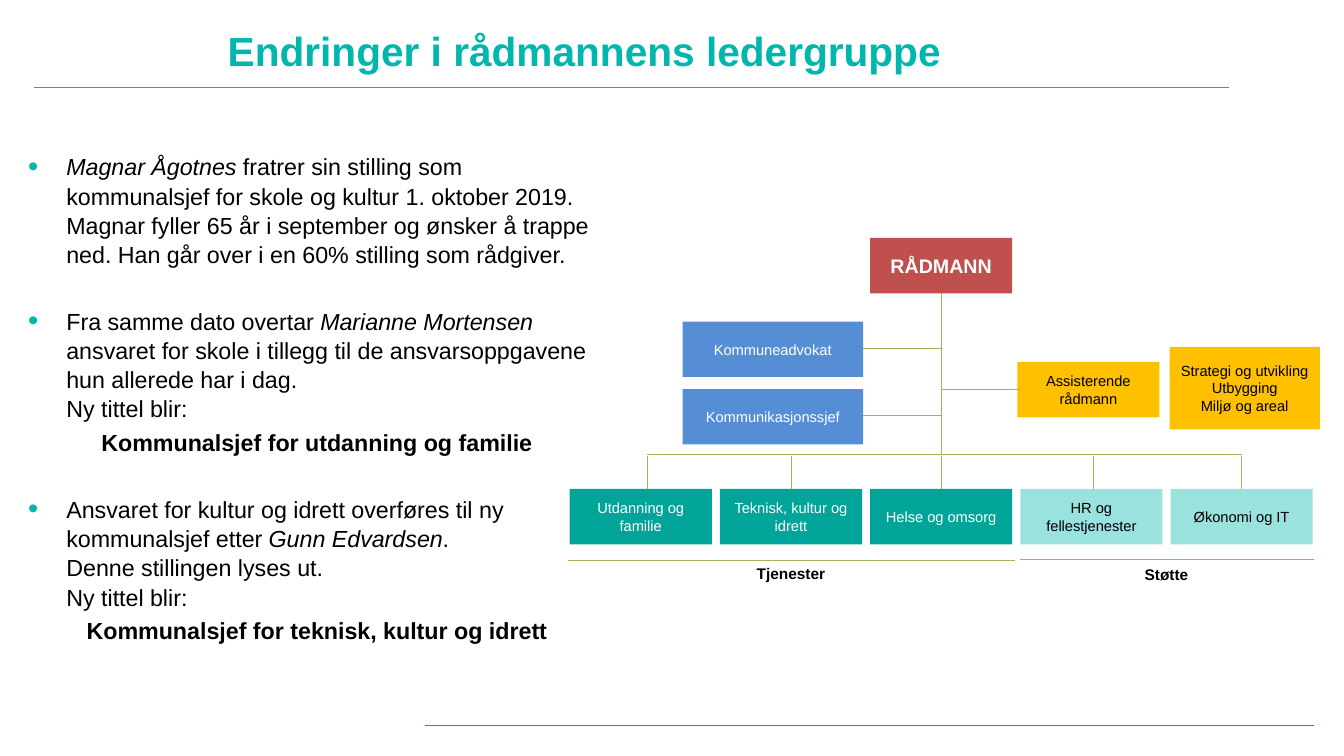
"""Build the slide on changes in the chief executive's management group."""
from dataclasses import dataclass

import lxml.etree
import pptx
import pptx.dml.color
import pptx.enum.shapes
import pptx.enum.text
import pptx.oxml.ns
import pptx.util

Inches = pptx.util.Inches
Pt = pptx.util.Pt
qn = pptx.oxml.ns.qn
Align = pptx.enum.text.PP_ALIGN
Anchor = pptx.enum.text.MSO_ANCHOR


@dataclass(frozen=True)
class Theme:
    """Colours and type sizes of the slide."""
    font: str = "Arial"
    accent: str = "01B6AD"
    black: str = "000000"
    white: str = "FFFFFF"
    red: str = "C0504D"
    blue: str = "558ED5"
    yellow: str = "FFC000"
    teal: str = "00A498"
    mint: str = "9AE2DE"
    rule: str = "808080"
    branch: str = "98B955"
    title: float = 29
    body: float = 16.6
    head: float = 14
    unit: float = 10.5
    label: float = 11


class SlideBuilder:
    """Draw styled elements on one slide."""

    def __init__(self, slide, theme):
        """Keep the slide and its theme."""
        self.slide = slide
        self.theme = theme

    def style(self, font, size, color, bold=False, italic=False):
        """Apply the theme font with the given look."""
        font.name = self.theme.font
        font.size = Pt(size)
        font.color.rgb = pptx.dml.color.RGBColor.from_string(color)
        font.bold = bold
        font.italic = italic

    def fill_frame(self, frame, text, size, color, bold):
        """Put centred text in a frame."""
        frame.word_wrap = True
        frame.vertical_anchor = Anchor.MIDDLE
        frame.text = text
        for paragraph in frame.paragraphs:
            paragraph.alignment = Align.CENTER
            for run in paragraph.runs:
                self.style(run.font, size, color, bold)

    def line(self, x1, y1, x2, y2, color, width=0.75):
        """Draw a straight line without shadow."""
        line = self.slide.shapes.add_connector(
            pptx.enum.shapes.MSO_CONNECTOR.STRAIGHT,
            Inches(x1), Inches(y1), Inches(x2), Inches(y2))
        line.line.color.rgb = pptx.dml.color.RGBColor.from_string(color)
        line.line.width = Pt(width)
        properties = line._element.find(qn("p:spPr"))
        lxml.etree.SubElement(properties, qn("a:effectLst"))

    def unit(self, text, x, y, width, fill, color, height=0.55, size=None, bold=False):
        """Draw one box of the organisation chart."""
        box = self.slide.shapes.add_shape(
            pptx.enum.shapes.MSO_SHAPE.RECTANGLE,
            Inches(x), Inches(y), Inches(width), Inches(height))
        box.shadow.inherit = False
        box.fill.solid()
        box.fill.fore_color.rgb = pptx.dml.color.RGBColor.from_string(fill)
        box.line.fill.background()
        self.fill_frame(box.text_frame, text, size or self.theme.unit, color, bold)

    def text_box(self, x, y, width, height):
        """Add a wrapping text box and return its frame."""
        box = self.slide.shapes.add_textbox(
            Inches(x), Inches(y), Inches(width), Inches(height))
        box.text_frame.word_wrap = True
        return box.text_frame

    def heading(self, text, x, y, width, height, size, color):
        """Add a bold centred line of text without margins."""
        frame = self.text_box(x, y, width, height)
        frame.margin_left = frame.margin_right = 0
        frame.margin_top = frame.margin_bottom = 0
        self.fill_frame(frame, text, size, color, True)

    def bullet(self, paragraph):
        """Give a paragraph a hanging accent bullet."""
        properties = paragraph._p.get_or_add_pPr()
        properties.set("marL", str(Inches(0.38)))
        properties.set("indent", str(Inches(-0.38)))
        color = lxml.etree.SubElement(properties, qn("a:buClr"))
        lxml.etree.SubElement(color, qn("a:srgbClr"), val=self.theme.accent)
        lxml.etree.SubElement(properties, qn("a:buSzPct"), val="125000")
        lxml.etree.SubElement(properties, qn("a:buFont"), typeface=self.theme.font)
        lxml.etree.SubElement(properties, qn("a:buChar"), char="•")

    def rich_text(self, paragraph, segments):
        """Write (text, italic) segments, breaking lines at newlines."""
        for text, italic in segments:
            for index, part in enumerate(text.split("\n")):
                if index:
                    paragraph.add_line_break()
                run = paragraph.add_run()
                run.text = part
                self.style(run.font, self.theme.body, self.theme.black, italic=italic)
        for line_break in paragraph._p.findall(qn("a:br")):
            lxml.etree.SubElement(
                line_break, qn("a:rPr"), sz=str(round(self.theme.body * 100)))

    def changes(self, items, x, y, width, height):
        """List the changes, each with an optional new job title."""
        frame = self.text_box(x, y, width, height)
        for index, (segments, job_title) in enumerate(items):
            change = frame.add_paragraph() if index else frame.paragraphs[0]
            change.line_spacing = 1.05
            if index:
                change.space_before = Pt(26.5)
            self.bullet(change)
            self.rich_text(change, segments)
            if job_title:
                new_title = frame.add_paragraph()
                new_title.text = job_title
                new_title.alignment = Align.CENTER
                new_title.line_spacing = 1.05
                new_title.space_before = Pt(3.3)
                self.style(new_title.runs[0].font, self.theme.body, self.theme.black, True)


CHANGES = [
    ([("Magnar Ågotnes ", True),
      ("fratrer sin stilling som kommunalsjef for skole og kultur 1. oktober 2019. "
       "Magnar fyller 65 år i september og ønsker å trappe ned. "
       "Han går over i en 60% stilling som rådgiver.", False)], None),
    ([("Fra samme dato overtar ", False), ("Marianne Mortensen ", True),
      ("ansvaret for skole i tillegg til de ansvarsoppgavene\n"
       "hun allerede har i dag.\nNy tittel blir:", False)],
     "Kommunalsjef for utdanning og familie"),
    ([("Ansvaret for kultur og idrett overføres til ny kommunalsjef etter ", False),
      ("Gunn Edvardsen", True),
      (".\nDenne stillingen lyses ut.\nNy tittel blir:", False)],
     "Kommunalsjef for teknisk, kultur og idrett"),
]


def main():
    """Create the presentation and save it."""
    deck = pptx.Presentation()
    deck.slide_width, deck.slide_height = Inches(13.33), Inches(7.5)
    theme = Theme()
    page = SlideBuilder(deck.slides.add_slide(deck.slide_layouts[6]), theme)

    page.line(0.34, 0.87, 12.19, 0.87, theme.rule, 0.5)
    page.line(13.03, 7.2, 4.22, 7.2, theme.teal)
    page.heading("Endringer i rådmannens ledergruppe",
                 0.18, 0.22, 11.24, 0.56, theme.title, theme.accent)
    page.changes(CHANGES, 0.18, 1.45, 5.92, 5.31)

    page.unit("RÅDMANN", 8.63, 2.36, 1.41, theme.red, theme.white,
              size=theme.head, bold=True)
    for name, top in (("Kommuneadvokat", 3.19), ("Kommunikasjonssjef", 3.86)):
        page.unit(name, 6.77, top, 1.79, theme.blue, theme.white)
    page.unit("Assisterende rådmann", 10.09, 3.59, 1.41, theme.yellow, theme.black)
    page.unit("Strategi og utvikling\nUtbygging\nMiljø og areal",
              11.6, 3.44, 1.49, theme.yellow, theme.black, height=0.82)
    departments = ["Utdanning og familie", "Teknisk, kultur og idrett",
                   "Helse og omsorg", "HR og fellestjenester", "Økonomi og IT"]
    for index, name in enumerate(departments):
        fill, color = (theme.teal, theme.white) if index < 3 else (theme.mint, theme.black)
        page.unit(name, 5.65 + 1.49 * index, 4.85, 1.41, fill, color)

    page.heading("Tjenester", 5.65, 5.58, 4.39, 0.22, theme.label, theme.black)
    page.heading("Støtte", 10.12, 5.59, 2.9, 0.22, theme.label, theme.black)

    branches = [(5.63, 5.56, 10.07, 5.56), (10.12, 5.55, 13.03, 5.55),
                (9.34, 4.51, 9.34, 2.91), (6.42, 4.51, 12.32, 4.51),
                (8.56, 3.46, 9.34, 3.46), (8.56, 4.12, 9.34, 4.12),
                (9.33, 3.86, 10.12, 3.86)]
    drops = [(x, 4.85, x, 4.52) for x in (6.42, 7.85, 9.34, 10.85, 12.31)]
    for ends in branches + drops:
        page.line(*ends, theme.branch)

    deck.save("out.pptx")


if __name__ == "__main__":
    main()
